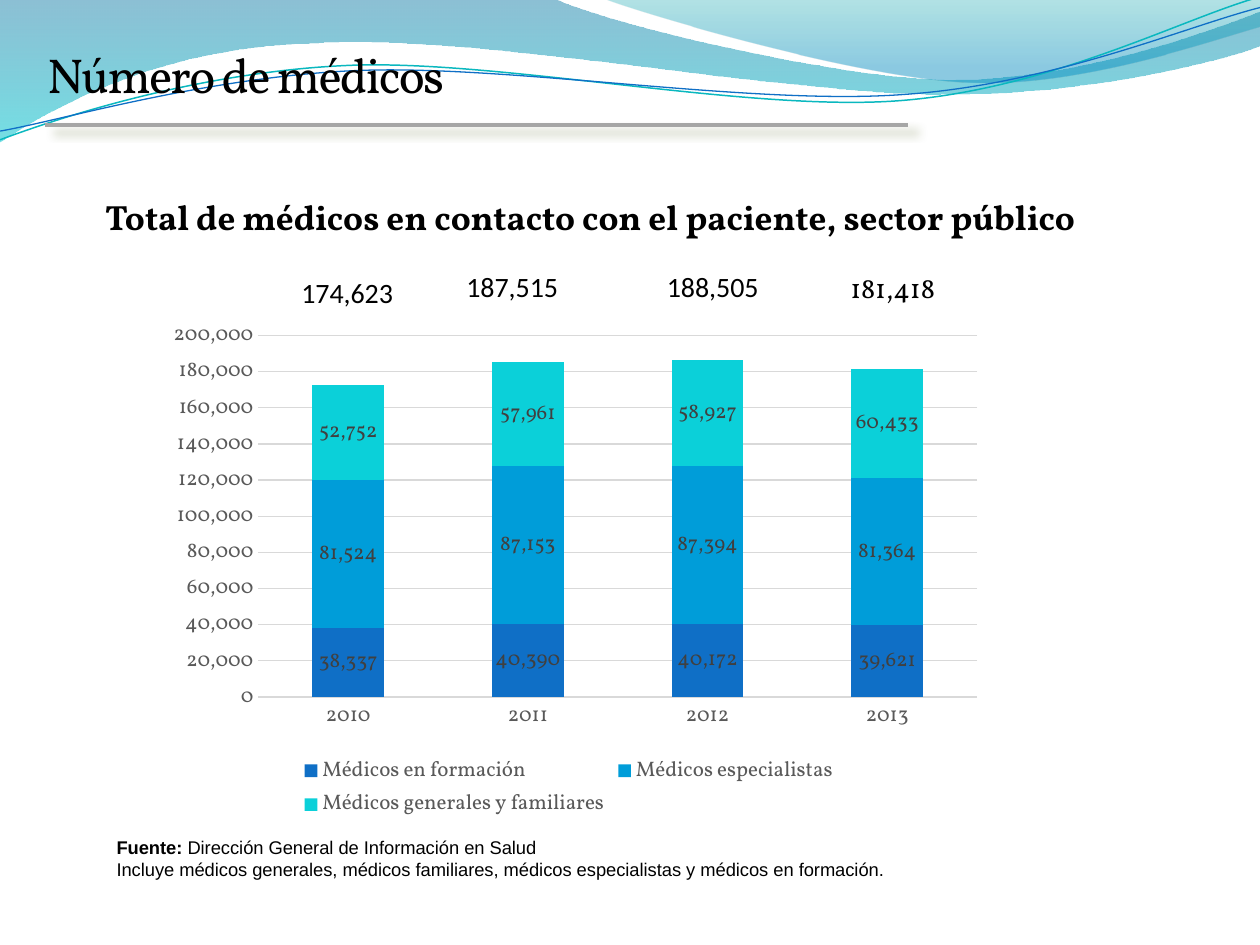
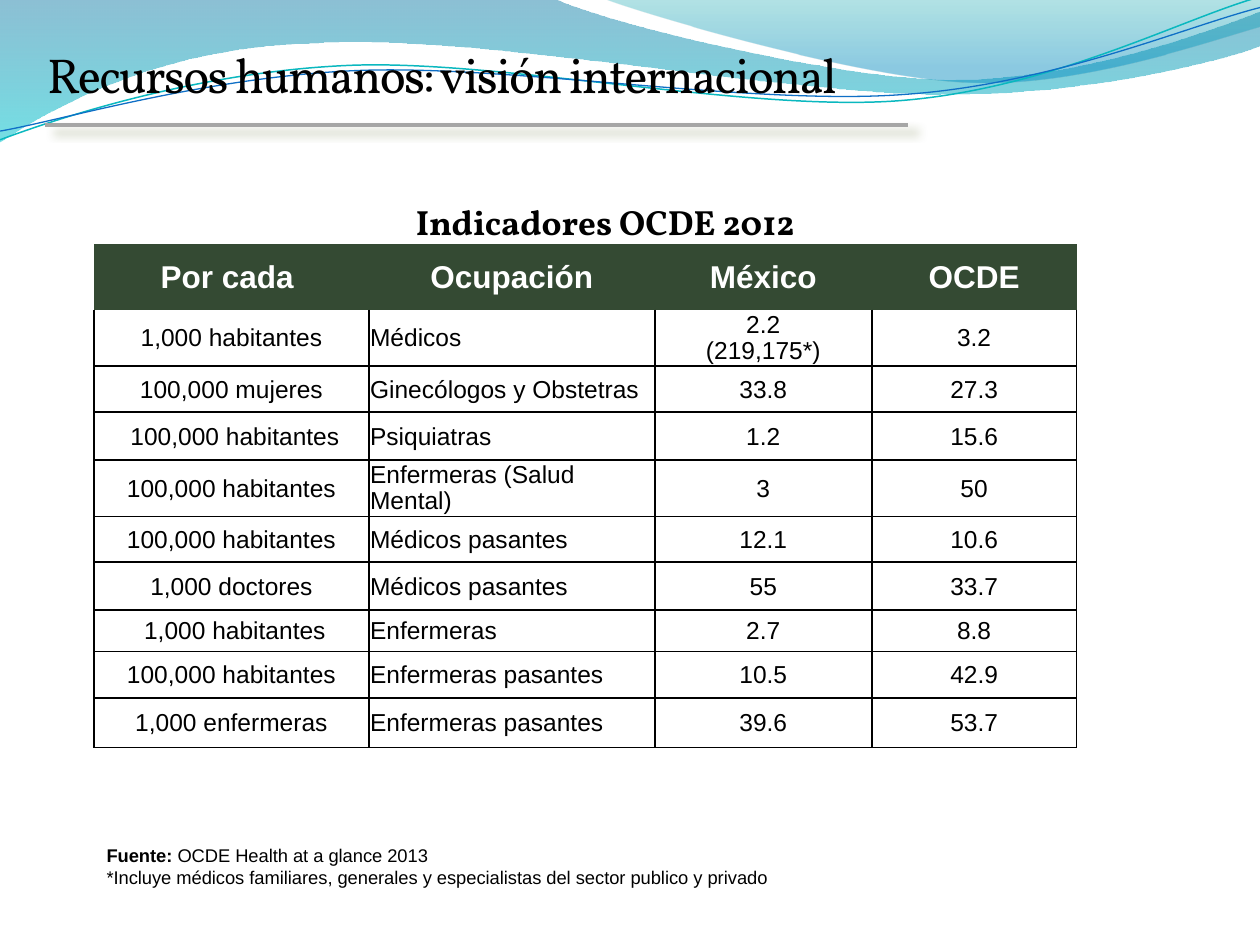
from lxml import etree
from pptx import Presentation
from pptx.chart.data import CategoryChartData
from pptx.dml.color import RGBColor
from pptx.enum.chart import XL_CHART_TYPE, XL_LABEL_POSITION, XL_LEGEND_POSITION, XL_TICK_MARK
from pptx.enum.shapes import MSO_CONNECTOR
from pptx.enum.text import MSO_ANCHOR, PP_ALIGN
from pptx.oxml import parse_xml
from pptx.oxml.ns import nsdecls, qn
from pptx.util import Pt

SERIF, SANS, PLAIN = "Vollkorn", "Arial", "Calibri"
BLACK, WHITE, HEADER_GREEN = "000000", "FFFFFF", "344A33"
AXIS_GREY, GRID_GREY, LABEL_GREY, RULE_GREY = "595959", "D9D9D9", "404040", "A6A6A6"
NO_TABLE_STYLE = "{2D5ABB26-0587-4C30-8999-92F81FD0307C}"
CENTER, LEFT = PP_ALIGN.CENTER, PP_ALIGN.LEFT

# Waves at the top: a start point, then lines (x, y) or curves (two controls, end).
# Gradient stops are (position %, colour, opacity %).
BANDS = [
    ([(0, 0), (316.8, -0.7), (342.7, 12.2, 478.1, 45.4, 545.8, 45.4),
      (614.2, 45.4, 689.8, 18.7, 720, 6.5), (720.7, 25.9),
      (707.8, 31.7, 626.4, 54.7, 537.1, 54), (447.8, 54, 275, 20.2, 185, 24.5),
      (92.9, 25.9, 33.1, 59.8, -0.7, 81.4), (0, 0)],
     [(0, "0074A1", 45), (100, "00C6CF", 55)]),
    ([(344.9, -0.7), (366.5, 7.9, 491, 44.6, 553.7, 46.8),
      (616.3, 49.7, 691.9, 23, 720, 15.1), (720, 0), (344.9, -0.7)],
     [(0, "00A1A9", 30), (80, "008BBF", 45)]),
]
WAVES = [
    ([(0, 79.9), (34.6, 67, 113.8, 41, 199.4, 37.4),
      (284.4, 33.8, 427, 64.1, 513.4, 57.6), (599.8, 51.1, 675.4, 10.8, 718.6, -1.4)],
     "0AB8BF", 0.85),
    ([(0, 74.9), (33.8, 69.1, 118.1, 43.9, 203.8, 40.3),
      (290.2, 36.7, 429.8, 60.5, 516.2, 54), (601.9, 48.2, 677.5, 15.1, 720, 4.3)],
     "0F6FC6", 0.75),
]


def color(hex_string):
    return RGBColor.from_string(hex_string)


def style(font, size, hex_string=BLACK, name=SERIF, bold=False):
    font.name, font.size, font.bold = name, Pt(size), bold
    font.color.rgb = color(hex_string)


class Deck:
    def __init__(self):
        self.presentation = Presentation()
        self.presentation.slide_width, self.presentation.slide_height = Pt(720), Pt(540)
        self.shapes = None

    def new_slide(self):
        slide = self.presentation.slides.add_slide(self.presentation.slide_layouts[6])
        self.shapes = slide.shapes
        for steps, stops in BANDS:
            self.band(steps, stops)
        for steps, hex_string, width in WAVES:
            self.wave(steps, hex_string, width)

    def title(self, words):
        heading = self.text(words, 19.8, 21.6, 533, 84, 28)
        heading.runs[0].font._element.set("spc", "-100")
        self.rule(25.6, 71.3, 518.8)

    def outline(self, steps, closed):
        ends = [(Pt(step[-2]), Pt(step[-1])) for step in steps]
        builder = self.shapes.build_freeform(*ends[0])
        builder.add_line_segments(ends[1:], close=closed)
        shape = builder.convert_to_shape()
        shape.shadow.inherit = False
        # Bend the segments that have control points
        segments = list(shape.element.iter(qn("a:lnTo")))
        for segment, step in zip(segments, steps[1:]):
            if len(step) == 6:
                curve = etree.Element(qn("a:cubicBezTo"))
                for x, y in zip(step[::2], step[1::2]):
                    etree.SubElement(curve, qn("a:pt"), x=str(Pt(x) - shape.left),
                                     y=str(Pt(y) - shape.top))
                segment.getparent().replace(segment, curve)
        return shape

    def band(self, steps, stops):
        shape = self.outline(steps, True)
        shape.line.fill.background()
        stop_xml = "".join(
            f'<a:gs pos="{position * 1000}"><a:srgbClr val="{hex_string}">'
            f'<a:alpha val="{opacity * 1000}"/></a:srgbClr></a:gs>'
            for position, hex_string, opacity in stops)
        gradient = parse_xml(
            f'<a:gradFill {nsdecls("a")} rotWithShape="1"><a:gsLst>{stop_xml}</a:gsLst>'
            '<a:lin ang="5400000" scaled="0"/></a:gradFill>')
        shape.element.spPr.find(qn("a:custGeom")).addnext(gradient)

    def wave(self, steps, hex_string, width):
        shape = self.outline(steps, False)
        shape.fill.background()
        shape.line.color.rgb, shape.line.width = color(hex_string), Pt(width)

    def rule(self, left, top, right):
        line = self.shapes.add_connector(
            MSO_CONNECTOR.STRAIGHT, Pt(left), Pt(top), Pt(right), Pt(top))
        line.line.color.rgb, line.line.width = color(RULE_GREY), Pt(2)
        line.element.spPr.append(parse_xml(
            f'<a:effectLst {nsdecls("a")}><a:outerShdw blurRad="{Pt(5)}" dist="{Pt(7)}" '
            f'dir="{38 * 60000}" algn="tl" rotWithShape="0"><a:srgbClr val="546422">'
            '<a:alpha val="36000"/></a:srgbClr></a:outerShdw></a:effectLst>'))

    def text(self, words, left, top, width, height, size, name=SERIF, bold=False, align=LEFT):
        frame = self.shapes.add_textbox(Pt(left), Pt(top), Pt(width), Pt(height)).text_frame
        frame.word_wrap = True
        frame.text = words
        for paragraph in frame.paragraphs:
            paragraph.alignment = align
            for run in paragraph.runs:
                style(run.font, size, name=name, bold=bold)
        return frame.paragraphs[0]

    def source(self, origin, remark, left, top, width):
        first = self.text(f"Fuente: \n{remark}", left, top, width, 32.4, 10.5, SANS)
        first.runs[0].font.bold = True
        tail = first.add_run()
        tail.text = origin
        style(tail.font, 10.5, name=SANS)

    def table(self, left, top, widths, heights):
        frame = self.shapes.add_table(
            len(heights), len(widths), Pt(left), Pt(top), Pt(sum(widths)), Pt(sum(heights)))
        next(frame.element.iter(qn("a:tableStyleId"))).text = NO_TABLE_STYLE
        table = frame.table
        table.first_row = table.horz_banding = False
        for column, width in zip(table.columns, widths):
            column.width = Pt(width)
        for row, height in zip(table.rows, heights):
            row.height = Pt(height)
        return table

    def cell(self, cell, words, size, name=SANS, hex_string=BLACK, bold=False, align=CENTER,
             anchor=MSO_ANCHOR.MIDDLE, inset=0.7, fill=None, edges="", spacing=None):
        cell.text = words
        cell.vertical_anchor = anchor
        cell.margin_left = cell.margin_right = cell.margin_top = Pt(inset)
        cell.margin_bottom = 0
        for paragraph in cell.text_frame.paragraphs:
            paragraph.alignment, paragraph.line_spacing = align, spacing
            style(paragraph.runs[0].font, size, hex_string, name, bold)
        properties = cell._tc.get_or_add_tcPr()
        for edge in edges:
            border = etree.SubElement(properties, qn(f"a:ln{edge}"), w=str(Pt(1)))
            solid = etree.SubElement(border, qn("a:solidFill"))
            etree.SubElement(solid, qn("a:srgbClr"), val=BLACK)
        if fill:
            cell.fill.solid()
            cell.fill.fore_color.rgb = color(fill)
        else:
            cell.fill.background()

    def stacked_chart(self, categories, series, left, top, width, height, plot_area):
        data = CategoryChartData(number_format="#,##0")
        data.categories = categories
        for name, values, _ in series:
            data.add_series(name, values)
        chart = self.shapes.add_chart(
            XL_CHART_TYPE.COLUMN_STACKED, Pt(left), Pt(top), Pt(width), Pt(height), data).chart
        style(chart.font, 10)
        chart.has_title = False
        chart.has_legend = True
        chart.legend.position = XL_LEGEND_POSITION.BOTTOM
        chart.legend.include_in_layout = False
        style(chart.legend.font, 12, AXIS_GREY)

        # Axes
        years, amounts = chart.category_axis, chart.value_axis
        for axis in (years, amounts):
            axis.major_tick_mark = axis.minor_tick_mark = XL_TICK_MARK.NONE
            style(axis.tick_labels.font, 12, AXIS_GREY)
        years.format.line.color.rgb, years.format.line.width = color(GRID_GREY), Pt(1)
        amounts.format.line.fill.background()
        amounts.minimum_scale, amounts.maximum_scale, amounts.major_unit = 0, 200000, 20000
        amounts.tick_labels.number_format = "#,##0"
        amounts.tick_labels.number_format_is_linked = False
        grid = amounts.major_gridlines.format.line
        grid.color.rgb, grid.width = color(GRID_GREY), Pt(0.75)

        # Columns
        plot = chart.plots[0]
        plot.gap_width, plot.overlap, plot.vary_by_categories = 150, 100, False
        for bar, (_, _, hex_string) in zip(plot.series, series):
            bar.format.fill.solid()
            bar.format.fill.fore_color.rgb = color(hex_string)
            labels = bar.data_labels
            labels.show_value, labels.position = True, XL_LABEL_POSITION.CENTER
            style(labels.font, 12, LABEL_GREY)

        # Place of the plot area, as shares of the chart
        area = next(chart.element.iter(qn("c:plotArea")))
        for old in area.findall(qn("c:layout")):
            area.remove(old)
        shares = "".join(f'<c:{key} val="{share}"/>' for key, share in zip("xywh", plot_area))
        area.insert(0, parse_xml(
            f'<c:layout {nsdecls("c")}><c:manualLayout><c:layoutTarget val="inner"/>'
            f'<c:xMode val="edge"/><c:yMode val="edge"/>{shares}</c:manualLayout></c:layout>'))


def doctors_slide(deck):
    deck.new_slide()
    deck.text("Total de médicos en contacto con el paciente, sector público",
              36.7, 108, 601.2, 31.7, 20, bold=True, align=CENTER)
    deck.source("Dirección General de Información en Salud",
                "Incluye médicos generales, médicos familiares, médicos especialistas "
                "y médicos en formación.", 59.5, 474.2, 572.4)
    deck.title("Número de médicos")

    # Totals above the columns
    for total, left, top, width in [("174,623", 139, 158.4, 118.8),
                                    ("187,515", 239.8, 154.8, 105.8),
                                    ("188,505", 354.4, 154.8, 105.8)]:
        holder = deck.table(left, top, [width], [19.4])
        deck.cell(holder.cell(0, 0), total, 16, PLAIN, anchor=MSO_ANCHOR.BOTTOM, inset=0)
    deck.text("181,418", 478.8, 151.2, 79.2, 26.6, 16)

    deck.stacked_chart(
        [2010, 2011, 2012, 2013],
        [("Médicos en formación", (38337, 40390, 40172, 39621), "0F6FC6"),
         ("Médicos especialistas", (81524, 87153, 87394, 81364), "009DD9"),
         ("Médicos generales y familiares", (52752, 57961, 58927, 60433), "0BD0D9")],
        82.1, 178, 486, 293, (0.135, 0.047, 0.845, 0.705))


def resources_slide(deck):
    deck.new_slide()
    rows = [
        ("Por cada ", "Ocupación", "México", "OCDE"),
        ("1,000 habitantes", "Médicos", "2.2\n(219,175*)", "3.2"),
        ("100,000 mujeres", "Ginecólogos y Obstetras", "33.8", "27.3"),
        (" 100,000 habitantes", "Psiquiatras", "1.2", "15.6"),
        ("100,000 habitantes", "Enfermeras (Salud Mental)", "3", "50"),
        ("100,000 habitantes", "Médicos pasantes", "12.1", "10.6"),
        ("1,000 doctores", "Médicos pasantes", "55", "33.7"),
        (" 1,000 habitantes", "Enfermeras", "2.7", "8.8"),
        ("100,000 habitantes", "Enfermeras pasantes", "10.5", "42.9"),
        ("1,000 enfermeras", "Enfermeras pasantes", "39.6", "53.7"),
    ]
    two_lines = ("2.2\n(219,175*)", "Enfermeras (Salud Mental)")
    indicators = deck.table(53.8, 139.5, [157, 163.4, 124, 117],
                            [37.4, 32.4, 26.2, 27.4, 32.4, 25.9, 27.4, 23.8, 26.6, 28.3])
    for r, row in enumerate(rows):
        for c, words in enumerate(row):
            if r == 0:
                look = dict(size=18, hex_string=WHITE, bold=True, fill=HEADER_GREEN)
            else:
                look = dict(size=14, align=LEFT if c == 1 else CENTER, edges="LRB",
                            spacing=0.95 if words in two_lines else None)
            deck.cell(indicators.cell(r, c), words, **look)

    deck.text("Indicadores OCDE 2012", 25.5, 111.2, 640.8, 31.7, 20, bold=True, align=CENTER)
    deck.source("OCDE Health at a glance 2013",
                "*Incluye médicos familiares, generales y especialistas del sector "
                "publico y privado", 53.8, 478.8, 436.3)
    deck.title("Recursos humanos: visión internacional")


def main():
    deck = Deck()
    doctors_slide(deck)
    resources_slide(deck)
    deck.presentation.save("out.pptx")


if __name__ == "__main__":
    main()
